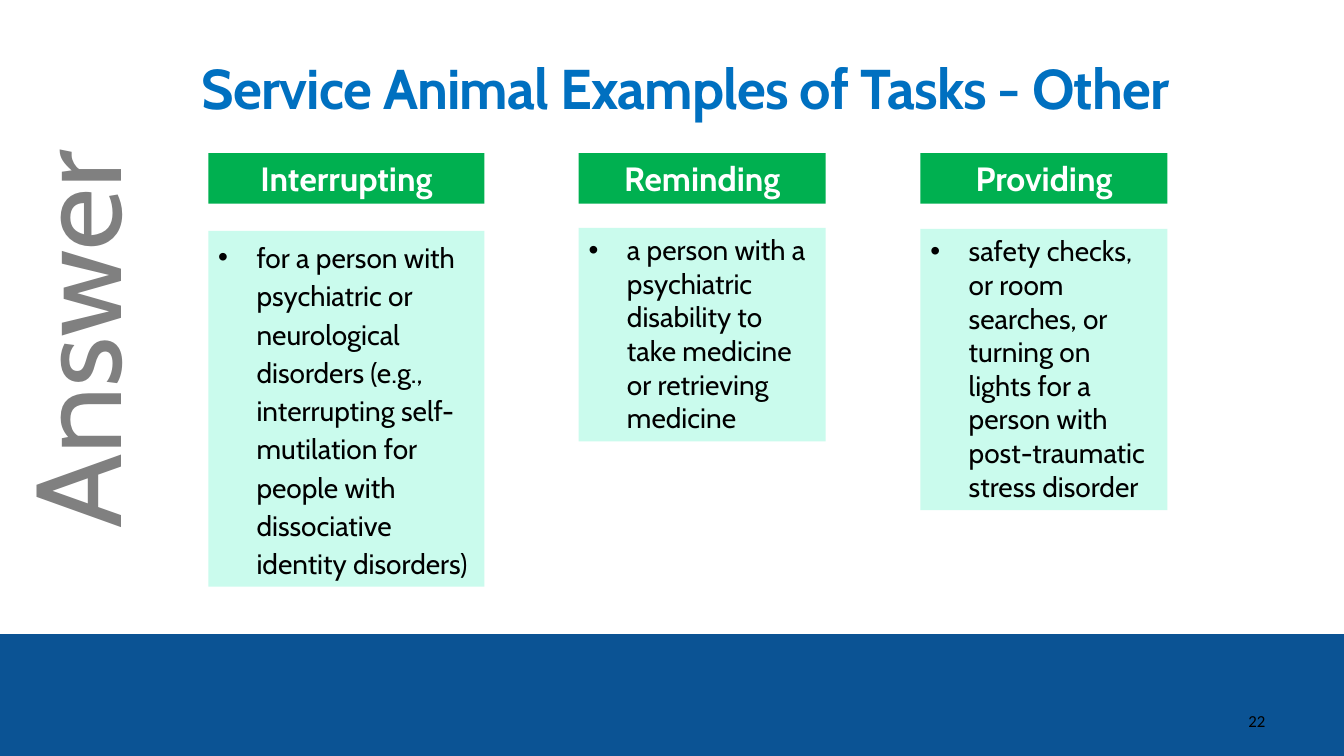
from lxml.etree import SubElement
from pptx import Presentation
from pptx.dml.color import RGBColor
from pptx.enum.shapes import MSO_SHAPE
from pptx.enum.text import MSO_ANCHOR, MSO_AUTO_SIZE, PP_ALIGN
from pptx.oxml.ns import qn
from pptx.util import Inches, Pt

SLIDE_WIDTH, SLIDE_HEIGHT = 13.33, 7.5
COLORS = {
    "title": "0070C0",
    "side": "808080",
    "band": "0B5394",
    "header": "00B050",
    "card": "CAFBED",
    "white": "FFFFFF",
    "black": "000000",
}
HEADER_TOP, HEADER_HEIGHT = 20.27, 6.67
# heading, task, left, width, card top, card height, line spacing
TASKS = [
    ("Interrupting",
     "for a person with psychiatric or neurological disorders (e.g., "
     "interrupting self-mutilation for people with dissociative identity disorders)",
     15.5, 20.55, 30.53, 47.07, 1.14),
    ("Reminding",
     "a person with a psychiatric disability to take medicine or retrieving medicine",
     43.06, 18.38, 30.13, 28.27, 1.0),
    ("Providing",
     "safety checks, or room searches, or turning on lights for a person with "
     "post-traumatic stress disorder",
     68.49, 18.38, 30.27, 37.2, 1.0),
]


def place(left, top, width, height):
    """Turn percentages of the slide's size into lengths."""
    column, row = SLIDE_WIDTH / 100, SLIDE_HEIGHT / 100
    return (Inches(left * column), Inches(top * row),
            Inches(width * column), Inches(height * row))


def write_text(shape, text, size, color, font="Cabin", bold=False,
               align=PP_ALIGN.LEFT, anchor=MSO_ANCHOR.MIDDLE, line_spacing=1.0,
               letter_spacing=None, bullet=False, margin=None, grow=False):
    frame = shape.text_frame
    frame.word_wrap = True
    frame.vertical_anchor = anchor
    frame.auto_size = MSO_AUTO_SIZE.SHAPE_TO_FIT_TEXT if grow else MSO_AUTO_SIZE.NONE
    if margin is not None:
        frame.margin_left = frame.margin_right = margin
        frame.margin_top = frame.margin_bottom = margin
    paragraph = frame.paragraphs[0]
    paragraph.alignment = align
    paragraph.line_spacing = line_spacing
    run = paragraph.add_run()
    run.text = text
    run.font.name = font
    run.font.size = Pt(size)
    run.font.bold = bold
    run.font.color.rgb = RGBColor.from_string(COLORS[color])
    if letter_spacing is not None:
        run.font._element.set("spc", str(round(letter_spacing * 100)))
    if bullet:
        add_bullet(paragraph)


def add_bullet(paragraph):
    indent = Inches(0.38)
    properties = paragraph._p.get_or_add_pPr()
    properties.set("marL", str(indent))
    properties.set("indent", str(-indent))
    SubElement(properties, qn("a:buFont"), typeface="Arial")
    SubElement(properties, qn("a:buChar"), char="•")


def add_rectangle(shapes, area, fill):
    rectangle = shapes.add_shape(MSO_SHAPE.RECTANGLE, *place(*area))
    rectangle.shadow.inherit = False
    rectangle.fill.solid()
    rectangle.fill.fore_color.rgb = RGBColor.from_string(COLORS[fill])
    rectangle.line.fill.background()
    return rectangle


def add_label(slide, area, text, rotation=0, **text_format):
    box = slide.shapes.add_textbox(*place(*area))
    box.rotation = rotation
    write_text(box, text, **text_format)


def add_task(slide, heading, task, left, width, card_top, card_height, line_spacing):
    """Group a heading bar with the card below it."""
    shapes = slide.shapes.add_group_shape().shapes
    header = add_rectangle(shapes, (left, HEADER_TOP, width, HEADER_HEIGHT), "header")
    write_text(header, heading, 24, "white", bold=True, align=PP_ALIGN.CENTER,
               anchor=MSO_ANCHOR.TOP, grow=True)
    card = add_rectangle(shapes, (left, card_top, width, card_height), "card")
    write_text(card, task, 20, "black", anchor=MSO_ANCHOR.TOP,
               line_spacing=line_spacing, bullet=True, grow=True)


def main():
    presentation = Presentation()
    presentation.slide_width = Inches(SLIDE_WIDTH)
    presentation.slide_height = Inches(SLIDE_HEIGHT)
    slide = presentation.slides.add_slide(presentation.slide_layouts[6])

    add_label(slide, (-10.28, 32.27, 31.51, 19.33), "Answer", rotation=270,
              size=86.2, color="side", align=PP_ALIGN.JUSTIFY, margin=0, grow=True)
    add_rectangle(slide.shapes, (0, 83.87, 100, 16.13), "band")
    add_label(slide, (10.73, 4, 80.57, 16.13), "Service Animal Examples of Tasks - Other",
              size=40, color="title", bold=True, align=PP_ALIGN.CENTER,
              line_spacing=0.9, letter_spacing=-0.6)
    add_label(slide, (87.25, 92.67, 12.53, 5.33), "22", size=12, color="black",
              font="Calibri", align=PP_ALIGN.CENTER)
    for task in TASKS:
        add_task(slide, *task)

    presentation.save("out.pptx")


if __name__ == "__main__":
    main()
